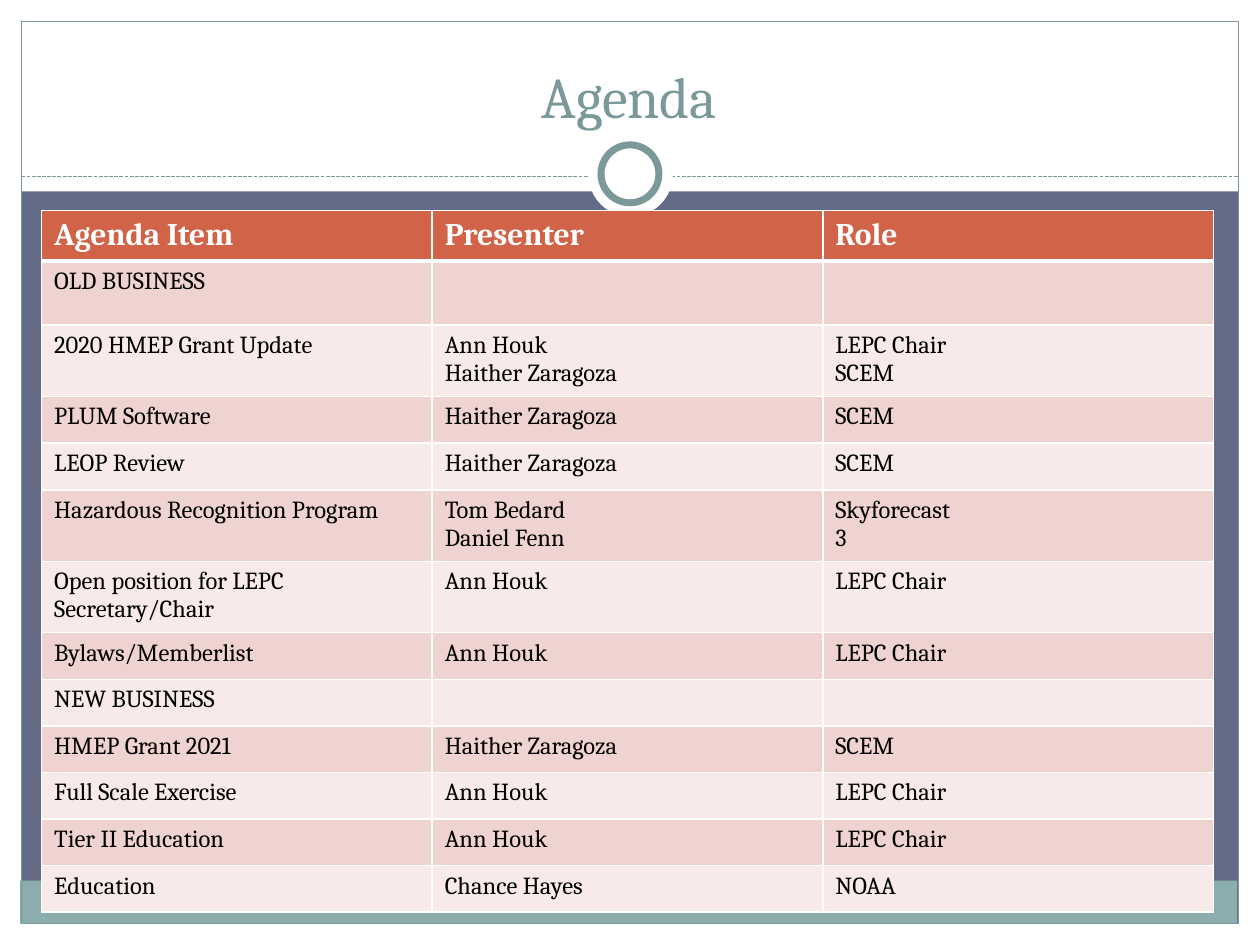
from dataclasses import dataclass
from typing import Optional

import pptx
import pptx.dml.color
import pptx.enum.dml
import pptx.enum.shapes
import pptx.enum.text
import pptx.oxml.ns
import pptx.util
from lxml import etree

Inches = pptx.util.Inches
Pt = pptx.util.Pt
RGBColor = pptx.dml.color.RGBColor
MSO_SHAPE = pptx.enum.shapes.MSO_SHAPE
qn = pptx.oxml.ns.qn

WHITE = RGBColor(0xFF, 0xFF, 0xFF)
BLACK = RGBColor(0, 0, 0)
SLATE = RGBColor(0x64, 0x6B, 0x86)
TEAL = RGBColor(0x8C, 0xAD, 0xAE)
TEAL_DARK = RGBColor(0x7C, 0x99, 0x9A)
ORANGE = RGBColor(0xD1, 0x63, 0x49)
BANDS = (RGBColor(0xEE, 0xD3, 0xD0), RGBColor(0xF7, 0xEA, 0xE9))
FONT = "Cambria"
COLUMN_WIDTH = 3.1
TWO_LINES = 0.55


@dataclass
class Panel:
    left: float
    top: float
    width: float
    height: float
    fill: Optional[RGBColor] = WHITE
    line_width: float = 0
    kind: MSO_SHAPE = MSO_SHAPE.RECTANGLE


@dataclass
class AgendaRow:
    item: str
    presenter: str = ""
    role: str = ""
    height: float = 0.37


MARGINS = [
    Panel(0, 7.33, 10, 0.17),
    Panel(0, 0, 10, 1.52),
    Panel(0, 0, 0.17, 7.5),
    Panel(9.83, 0, 0.17, 7.5),
    Panel(0.16, 6.99, 9.66, 0.34, TEAL),
    Panel(0.17, 0.17, 9.66, 7.16, None, 0.75),
]
RINGS = [
    Panel(4.67, 1.05, 0.67, 0.67, kind=MSO_SHAPE.OVAL),
    Panel(4.77, 1.15, 0.46, 0.46, line_width=4, kind=MSO_SHAPE.OVAL),
]
AGENDA = [
    AgendaRow("Agenda Item", "Presenter", "Role", 0.39),
    AgendaRow("OLD BUSINESS", height=0.51),
    AgendaRow("2020 HMEP Grant Update", "Ann Houk\nHaither Zaragoza", "LEPC Chair\nSCEM", TWO_LINES),
    AgendaRow("PLUM Software", "Haither Zaragoza", "SCEM"),
    AgendaRow("LEOP Review", "Haither Zaragoza", "SCEM"),
    AgendaRow("Hazardous Recognition Program", "Tom Bedard\nDaniel Fenn", "Skyforecast\n3", TWO_LINES),
    AgendaRow("Open position for LEPC Secretary/Chair", "Ann Houk", "LEPC Chair", TWO_LINES),
    AgendaRow("Bylaws/Memberlist", "Ann Houk", "LEPC Chair"),
    AgendaRow("NEW BUSINESS"),
    AgendaRow("HMEP Grant 2021", "Haither Zaragoza", "SCEM"),
    AgendaRow("Full Scale Exercise", "Ann Houk", "LEPC Chair"),
    AgendaRow("Tier II Education", "Ann Houk", "LEPC Chair"),
    AgendaRow("Education", "Chance Hayes", "NOAA"),
]


def add_panel(s, panel: Panel) -> None:
    sp = s.shapes.add_shape(panel.kind, Inches(panel.left), Inches(panel.top),
                            Inches(panel.width), Inches(panel.height))
    sp.shadow.inherit = False
    if panel.fill is None:
        sp.fill.background()
    else:
        sp.fill.solid()
        sp.fill.fore_color.rgb = panel.fill
    if panel.line_width:
        sp.line.color.rgb = TEAL_DARK
        sp.line.width = Pt(panel.line_width)
    else:
        sp.line.fill.background()


def add_divider(s) -> None:
    line = s.shapes.add_connector(pptx.enum.shapes.MSO_CONNECTOR.STRAIGHT,
                                  Inches(0.17), Inches(1.4), Inches(9.83), Inches(1.4))
    line.line.color.rgb = TEAL_DARK
    line.line.width = Pt(0.75)
    line.line.dash_style = pptx.enum.dml.MSO_LINE.SQUARE_DOT
    etree.SubElement(line._element.spPr, qn("a:effectLst"))


def add_run(p, text: str, size: float, color: RGBColor, bold: bool = False) -> None:
    r = p.add_run()
    r.text = text
    r.font.name = FONT
    r.font.size = Pt(size)
    r.font.bold = bold
    r.font.color.rgb = color


def add_title(s, text: str) -> None:
    sp = s.shapes.add_textbox(Inches(0.33), Inches(0.25), Inches(9.33), Inches(0.83))
    tf = sp.text_frame
    tf.word_wrap = True
    tf.vertical_anchor = pptx.enum.text.MSO_ANCHOR.BOTTOM
    p = tf.paragraphs[0]
    p.alignment = pptx.enum.text.PP_ALIGN.CENTER
    add_run(p, text, 33, TEAL_DARK)


def set_border(cell, side: str, width: float) -> None:
    ln = etree.SubElement(cell._tc.get_or_add_tcPr(), qn(f"a:ln{side}"), w=str(Pt(width)))
    fill = etree.SubElement(ln, qn("a:solidFill"))
    etree.SubElement(fill, qn("a:srgbClr"), val=str(WHITE))


def fill_cell(cell, text: str, row: int) -> None:
    header = row == 0
    widths = {"L": 1, "R": 1, "T": 3 if row == 1 else 1, "B": 3 if header else 1}
    for side, width in widths.items():
        set_border(cell, side, width)
    cell.fill.solid()
    cell.fill.fore_color.rgb = ORANGE if header else BANDS[(row - 1) % 2]
    size = 18 if header else 14
    tf = cell.text_frame
    if not text:
        etree.SubElement(tf.paragraphs[0]._p, qn("a:endParaRPr"), sz=str(size * 100))
        return
    for i, line in enumerate(text.split("\n")):
        p = tf.add_paragraph() if i else tf.paragraphs[0]
        add_run(p, line, size, WHITE if header else BLACK, header)


def add_agenda(s, rows: list[AgendaRow]) -> None:
    height = sum(row.height for row in rows)
    table = s.shapes.add_table(len(rows), 3, Inches(0.33), Inches(1.67),
                               Inches(3 * COLUMN_WIDTH), Inches(height)).table
    for column in table.columns:
        column.width = Inches(COLUMN_WIDTH)
    for i, row in enumerate(rows):
        table.rows[i].height = Inches(row.height)
        for j, text in enumerate((row.item, row.presenter, row.role)):
            fill_cell(table.cell(i, j), text, i)


def main() -> None:
    prs = pptx.Presentation()
    prs.slide_width, prs.slide_height = Inches(10), Inches(7.5)
    s = prs.slides.add_slide(prs.slide_layouts[6])
    s.background.fill.solid()
    s.background.fill.fore_color.rgb = SLATE
    for panel in MARGINS:
        add_panel(s, panel)
    add_divider(s)
    for ring in RINGS:
        add_panel(s, ring)
    add_title(s, "Agenda")
    add_agenda(s, AGENDA)
    prs.save("out.pptx")


if __name__ == "__main__":
    main()
